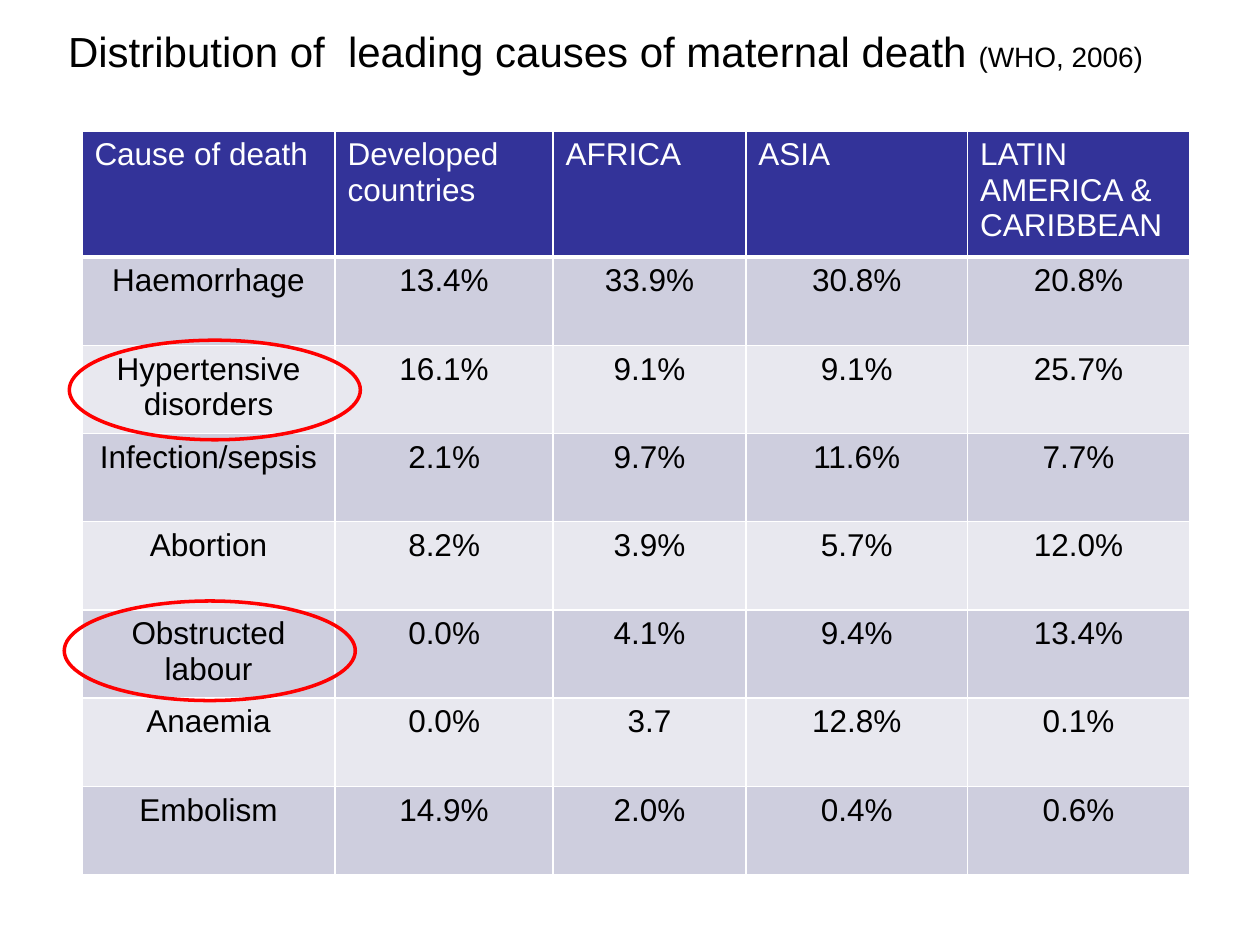
from dataclasses import dataclass

from lxml import etree
from pptx import Presentation
from pptx import util as u
from pptx.dml.color import RGBColor
from pptx.enum import shapes, text
from pptx.oxml.ns import qn


@dataclass(frozen=True)
class Theme:
    font: str = "Arial"
    ink: str = "000000"
    white: str = "FFFFFF"
    header: str = "333399"
    bands: tuple[str, str] = ("CECEDE", "E8E8EF")
    mark: str = "FF0000"
    title_size: int = 24
    source_size: int = 16
    table_size: int = 18


@dataclass(frozen=True)
class Box:
    left: float
    top: float
    width: float
    height: float

    def lengths(self) -> list[u.Length]:
        return [u.Inches(v) for v in (self.left, self.top, self.width, self.height)]


THEME = Theme()
TITLE_BOX = Box(0.44, 0.15, 9, 1.37)
TABLE_BOX = Box(0.65, 1.04, 8.79, 5.9)
COLUMN_WIDTHS = (2.01, 1.73, 1.53, 1.76, 1.76)
HEADER_HEIGHT, ROW_HEIGHT = 1.0, 0.7
MARKS = (Box(0.51, 4.77, 2.31, 0.79), Box(0.55, 2.7, 2.31, 0.79))

ROWS = (
    ("Cause of death", "Developed countries", "AFRICA", "ASIA", "LATIN AMERICA & CARIBBEAN"),
    ("Haemorrhage", "13.4%", "33.9%", "30.8%", "20.8%"),
    ("Hypertensive disorders", "16.1%", "9.1%", "9.1%", "25.7%"),
    ("Infection/sepsis", "2.1%", "9.7%", "11.6%", "7.7%"),
    ("Abortion", "8.2%", "3.9%", "5.7%", "12.0%"),
    ("Obstructed labour", "0.0%", "4.1%", "9.4%", "13.4%"),
    ("Anaemia", "0.0%", "3.7", "12.8%", "0.1%"),
    ("Embolism", "14.9%", "2.0%", "0.4%", "0.6%"),
)


def add_run(p, words: str, size: int, color: str) -> None:
    r = p.add_run()
    r.text = words
    for name, value in {"name": THEME.font, "size": u.Pt(size), "bold": False}.items():
        setattr(r.font, name, value)
    r.font.color.rgb = RGBColor.from_string(color)


def add_title(s) -> None:
    sp = s.shapes.title
    for name, value in zip(("left", "top", "width", "height"), TITLE_BOX.lengths()):
        setattr(sp, name, value)
    tf = sp.text_frame
    frame_format = {
        "word_wrap": True,
        "auto_size": text.MSO_AUTO_SIZE.NONE,
        "vertical_anchor": text.MSO_ANCHOR.TOP,
    }
    for name, value in frame_format.items():
        setattr(tf, name, value)
    p = tf.paragraphs[0]
    p.alignment = text.PP_ALIGN.LEFT
    p.space_before = u.Pt(3)
    add_run(p, "Distribution of  leading causes of maternal death ", THEME.title_size, THEME.ink)
    add_run(p, "(WHO, 2006)", THEME.source_size, THEME.ink)


def set_borders(cell, bottom: int) -> None:
    """Draw white borders, 1 pt wide except for the bottom one."""
    tc_pr = cell._tc.get_or_add_tcPr()
    for side, width in {"L": 1, "R": 1, "T": 1, "B": bottom}.items():
        ln = etree.SubElement(tc_pr, qn(f"a:ln{side}"), w=str(u.Pt(width)))
        fill = etree.SubElement(ln, qn("a:solidFill"))
        etree.SubElement(fill, qn("a:srgbClr"), val=THEME.white)


def add_table(s) -> None:
    table = s.shapes.add_table(len(ROWS), len(COLUMN_WIDTHS), *TABLE_BOX.lengths()).table
    for column, width in zip(table.columns, COLUMN_WIDTHS):
        column.width = u.Inches(width)
    for i, values in enumerate(ROWS):
        is_header = i == 0
        table.rows[i].height = u.Inches(HEADER_HEIGHT if is_header else ROW_HEIGHT)
        fill = THEME.header if is_header else THEME.bands[(i - 1) % 2]
        for j, value in enumerate(values):
            cell = table.cell(i, j)
            set_borders(cell, bottom=3 if is_header else 1)
            cell.fill.solid()
            cell.fill.fore_color.rgb = RGBColor.from_string(fill)
            p = cell.text_frame.paragraphs[0]
            p.alignment = text.PP_ALIGN.LEFT if is_header else text.PP_ALIGN.CENTER
            add_run(p, value, THEME.table_size, THEME.white if is_header else THEME.ink)


def add_mark(s, box: Box) -> None:
    sp = s.shapes.add_shape(shapes.MSO_SHAPE.OVAL, *box.lengths())
    sp.shadow.inherit = False
    sp.fill.background()
    sp.line.color.rgb = RGBColor.from_string(THEME.mark)
    sp.line.width = u.Pt(2)


def main() -> None:
    prs = Presentation()
    prs.slide_width, prs.slide_height = u.Inches(10), u.Inches(7.5)
    s = prs.slides.add_slide(prs.slide_layouts.get_by_name("Title Only"))
    add_title(s)
    add_table(s)
    for box in MARKS:
        add_mark(s, box)
    prs.save("out.pptx")


if __name__ == "__main__":
    main()
